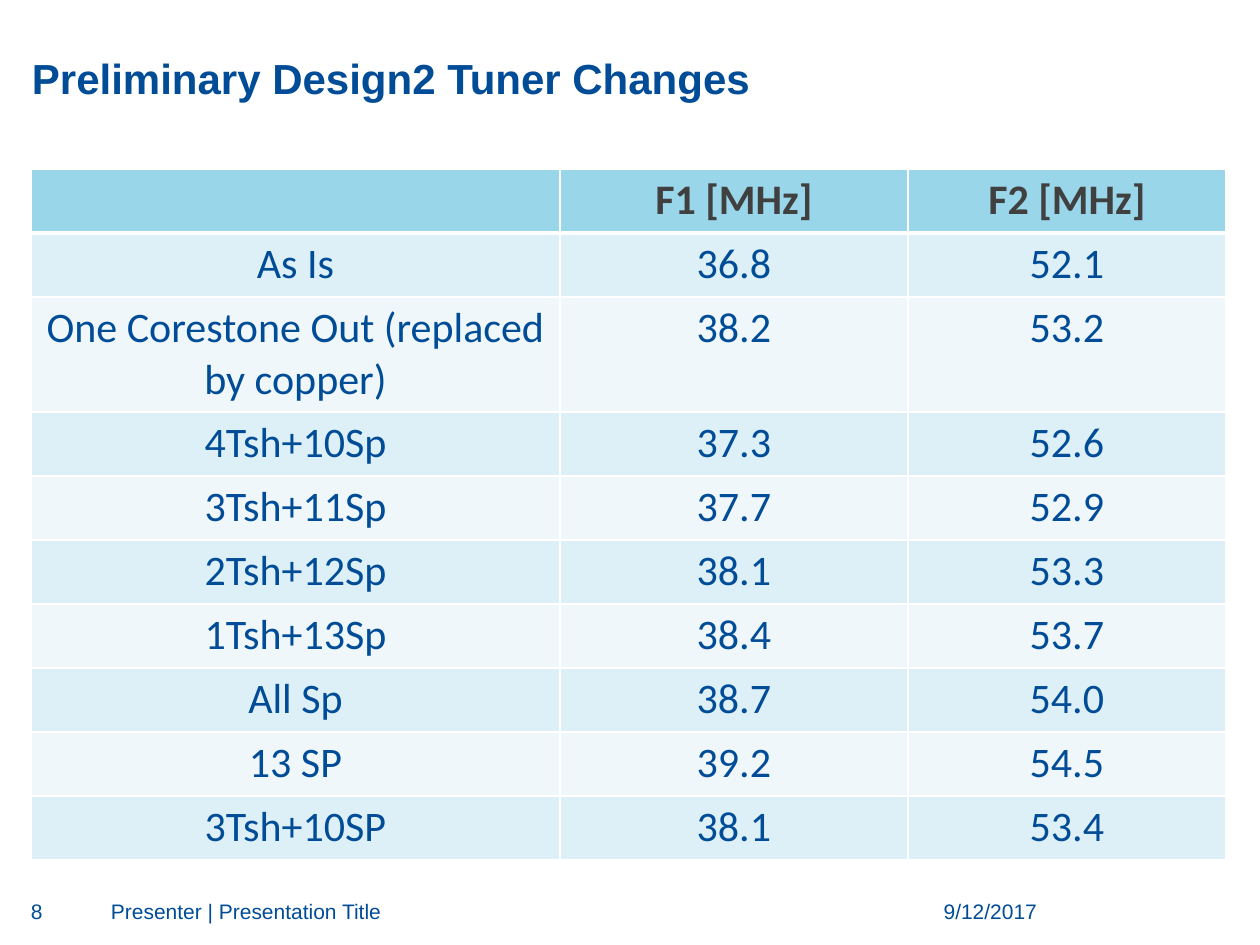
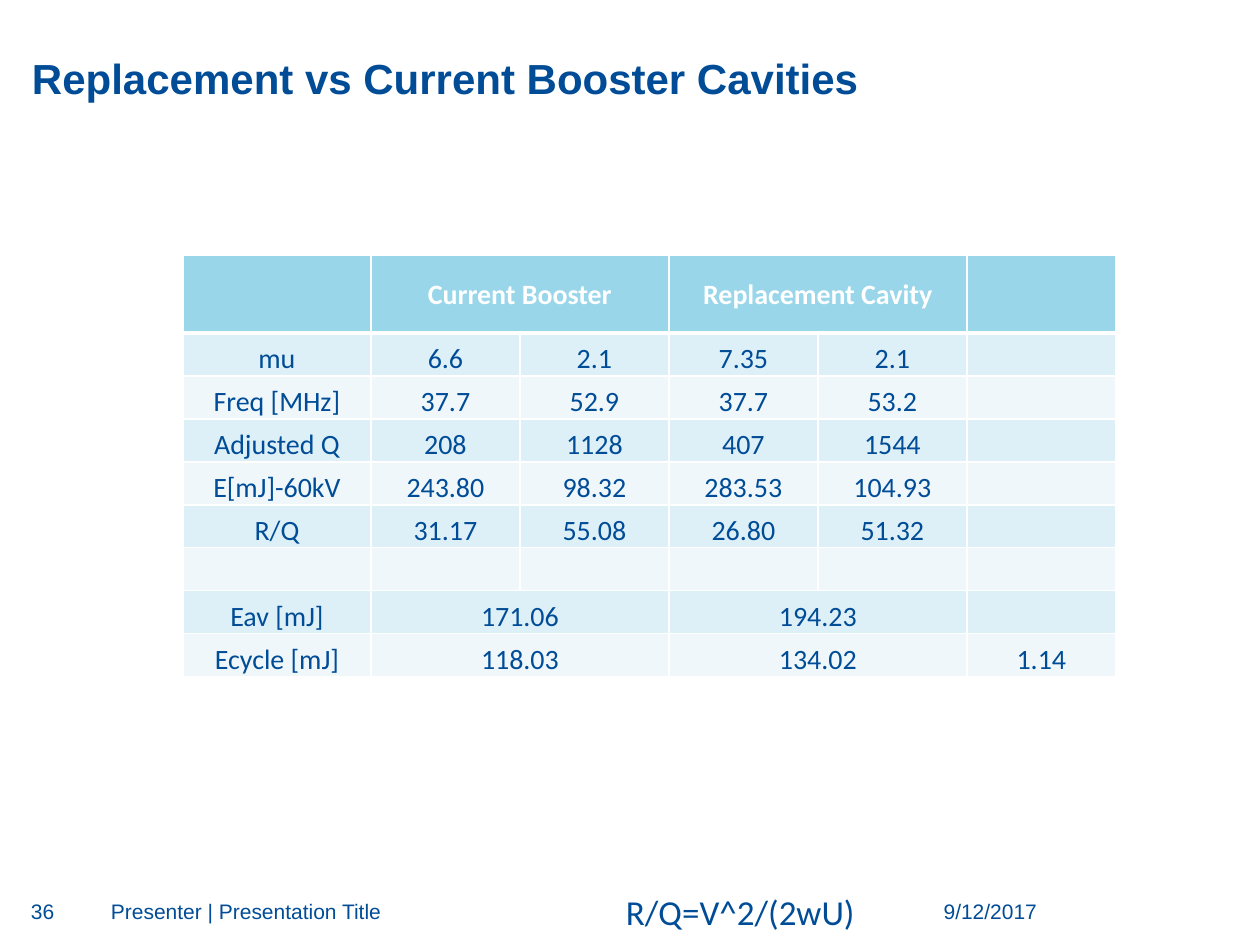
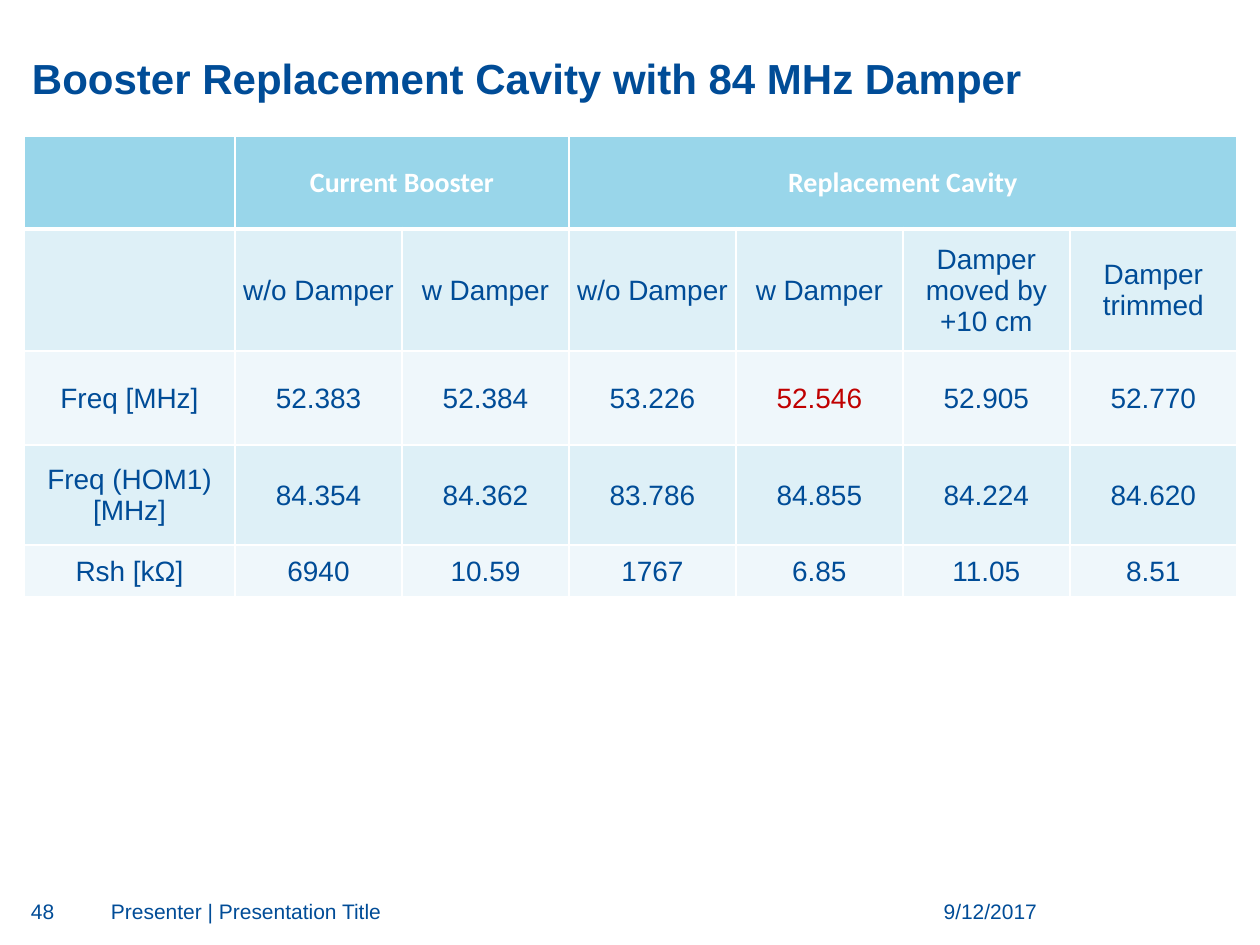
from lxml.etree import SubElement
from pptx import Presentation
from pptx.dml.color import RGBColor
from pptx.enum.text import MSO_ANCHOR as ANCHOR, PP_ALIGN as ALIGN
from pptx.oxml import parse_xml
from pptx.oxml.ns import nsdecls, qn
from pptx.util import Emu, Pt

EMU_PER_PX = 914400 / 126
NAVY, SKY, WHITE, GRAY, RED = "004C97", "99D6EA", "FFFFFF", "404040", "C00000"
BANDS = ("DEF0F7", "EFF7FB")


def px(n):
    return Emu(round(n * EMU_PER_PX))


def rgb(value):
    return RGBColor.from_string(value)


class Deck:
    """Hold the shared style and the current slide."""

    def __init__(self):
        self.prs = Presentation()
        self.prs.slide_width, self.prs.slide_height = px(1260), px(945)
        self.s = None

    def run(self, p, text, size, font="Arial", color=NAVY, bold=False):
        r = p.add_run()
        r.text = text
        r.font.size, r.font.name, r.font.bold = Pt(size), font, bold
        r.font.color.rgb = rgb(color)

    def margins(self, box, left, top, right, bottom):
        box.margin_left, box.margin_top = px(left), px(top)
        box.margin_right, box.margin_bottom = px(right), px(bottom)

    def slide(self, title, number):
        self.s = self.prs.slides.add_slide(self.prs.slide_layouts[5])
        sp = self.s.shapes.title
        sp.left, sp.top, sp.width, sp.height = px(32), px(14), px(1197), px(89)
        tf = sp.text_frame
        tf.vertical_anchor = ANCHOR.BOTTOM
        self.margins(tf, 0, 0, 0, 0)
        p = tf.paragraphs[0]
        p.alignment = ALIGN.LEFT
        self.run(p, title, 24, bold=True)
        self.text("9/12/2017", 888, 898, 149, 33, align=ALIGN.RIGHT)
        self.text("Presenter | Presentation Title", 111, 898, 741, 33)
        self.text(str(number), 31, 898, 62, 33)

    def text(self, text, x, y, w, h, size=12, font="Arial", align=ALIGN.LEFT,
             inset=(0, 0, 0, 0), wrap=True):
        tf = self.s.shapes.add_textbox(px(x), px(y), px(w), px(h)).text_frame
        tf.word_wrap = wrap
        self.margins(tf, *inset)
        p = tf.paragraphs[0]
        p.alignment = align
        self.run(p, text, size, font)

    def borders(self, cell, row):
        widths = {"L": 1, "R": 1, "T": 3 if row == 1 else 1, "B": 3 if row == 0 else 1}
        tc_pr = cell._tc.get_or_add_tcPr()
        for i, (side, width) in enumerate(widths.items()):
            ln = parse_xml(f'<a:ln{side} {nsdecls("a")} w="{Pt(width)}"/>')
            fill = SubElement(ln, qn("a:solidFill"))
            SubElement(fill, qn("a:srgbClr"), val=WHITE)
            tc_pr.insert(i, ln)

    def table(self, x, y, cols, rows, data, size=16, font="Calibri", head_color=WHITE,
              head_anchor=ANCHOR.MIDDLE, anchor=ANCHOR.MIDDLE, inset=(1, 1, 1, 0), accents=()):
        frame = self.s.shapes.add_table(len(rows), len(cols), px(x), px(y),
                                        px(sum(cols)), px(sum(rows)))
        tbl = frame.table
        tbl.horz_banding = False
        for col, w in zip(tbl.columns, cols):
            col.width = px(w)
        for row, h in zip(tbl.rows, rows):
            row.height = px(h)
        for i, values in enumerate(data):
            head = i == 0
            for j, value in enumerate(values):
                cell = tbl.cell(i, j)
                cell.fill.solid()
                cell.fill.fore_color.rgb = rgb(SKY if head else BANDS[(i - 1) % 2])
                self.borders(cell, i)
                self.margins(cell, *inset)
                cell.vertical_anchor = head_anchor if head else anchor
                if value:
                    p = cell.text_frame.paragraphs[0]
                    p.alignment = ALIGN.CENTER
                    body_color = RED if (i, j) in accents else NAVY
                    self.run(p, value, size, "Calibri" if head else font,
                             head_color if head else body_color, head)
            self.merge(tbl, i, values)

    def merge(self, tbl, i, values):
        for j, value in enumerate(values):
            end = j
            while end + 1 < len(values) and values[end + 1] is None:
                end += 1
            if value is not None and end > j:
                tbl.cell(i, j).merge(tbl.cell(i, end))


def main():
    deck = Deck()

    deck.slide("Preliminary Design2 Tuner Changes", 8)
    tuner = [
        ("", "F1 [MHz]", "F2 [MHz]"),
        ("As Is", "36.8", "52.1"),
        ("One Corestone Out (replaced by copper)", "38.2", "53.2"),
        ("4Tsh+10Sp", "37.3", "52.6"),
        ("3Tsh+11Sp", "37.7", "52.9"),
        ("2Tsh+12Sp", "38.1", "53.3"),
        ("1Tsh+13Sp", "38.4", "53.7"),
        ("All Sp", "38.7", "54.0"),
        ("13 SP", "39.2", "54.5"),
        ("3Tsh+10SP", "38.1", "53.4"),
    ]
    deck.table(31, 169, [529, 348, 318], [64, 64, 115] + [64] * 7, tuner, size=24,
               head_color=GRAY, head_anchor=ANCHOR.TOP, anchor=ANCHOR.TOP,
               inset=(13, 6, 13, 6))

    deck.slide("Replacement vs Current Booster Cavities", 36)
    cavities = [
        ("", "Current Booster", None, "Replacement Cavity", None, ""),
        ("mu", "6.6", "2.1", "7.35", "2.1", ""),
        ("Freq [MHz]", "37.7", "52.9", "37.7", "53.2", ""),
        ("Adjusted Q", "208", "1128", "407", "1544", ""),
        ("E[mJ]-60kV", "243.80", "98.32", "283.53", "104.93", ""),
        ("R/Q", "31.17", "55.08", "26.80", "51.32", ""),
        ("", "", "", "", "", ""),
        ("Eav [mJ]", "171.06", None, "194.23", None, ""),
        ("Ecycle [mJ]", "118.03", None, "134.02", None, "1.14"),
    ]
    deck.table(183, 255, [188] + [149] * 5, [78] + [43] * 8, cavities, anchor=ANCHOR.BOTTOM)
    deck.text("R/Q=V^2/(2wU)", 613, 884, 257, 55, size=20, font="Calibri",
              inset=(13, 6, 13, 6), wrap=False)

    deck.slide("Booster Replacement Cavity with 84 MHz Damper", 48)
    damper = [
        ("", "Current Booster", None, "Replacement Cavity", None, None, None),
        ("", "w/o Damper", "w Damper", "w/o Damper", "w Damper",
         "Damper moved by +10 cm", "Damper trimmed"),
        ("Freq [MHz]", "52.383", "52.384", "53.226", "52.546", "52.905", "52.770"),
        ("Freq (HOM1) [MHz]", "84.354", "84.362", "83.786", "84.855", "84.224", "84.620"),
        ("Rsh [kΩ]", "6940", "10.59", "1767", "6.85", "11.05", "8.51"),
    ]
    deck.table(24, 136, [211] + [167] * 6, [93, 122, 94, 100, 52], damper, font="Arial",
               accents={(2, 4)})

    deck.prs.save("out.pptx")


if __name__ == "__main__":
    main()
